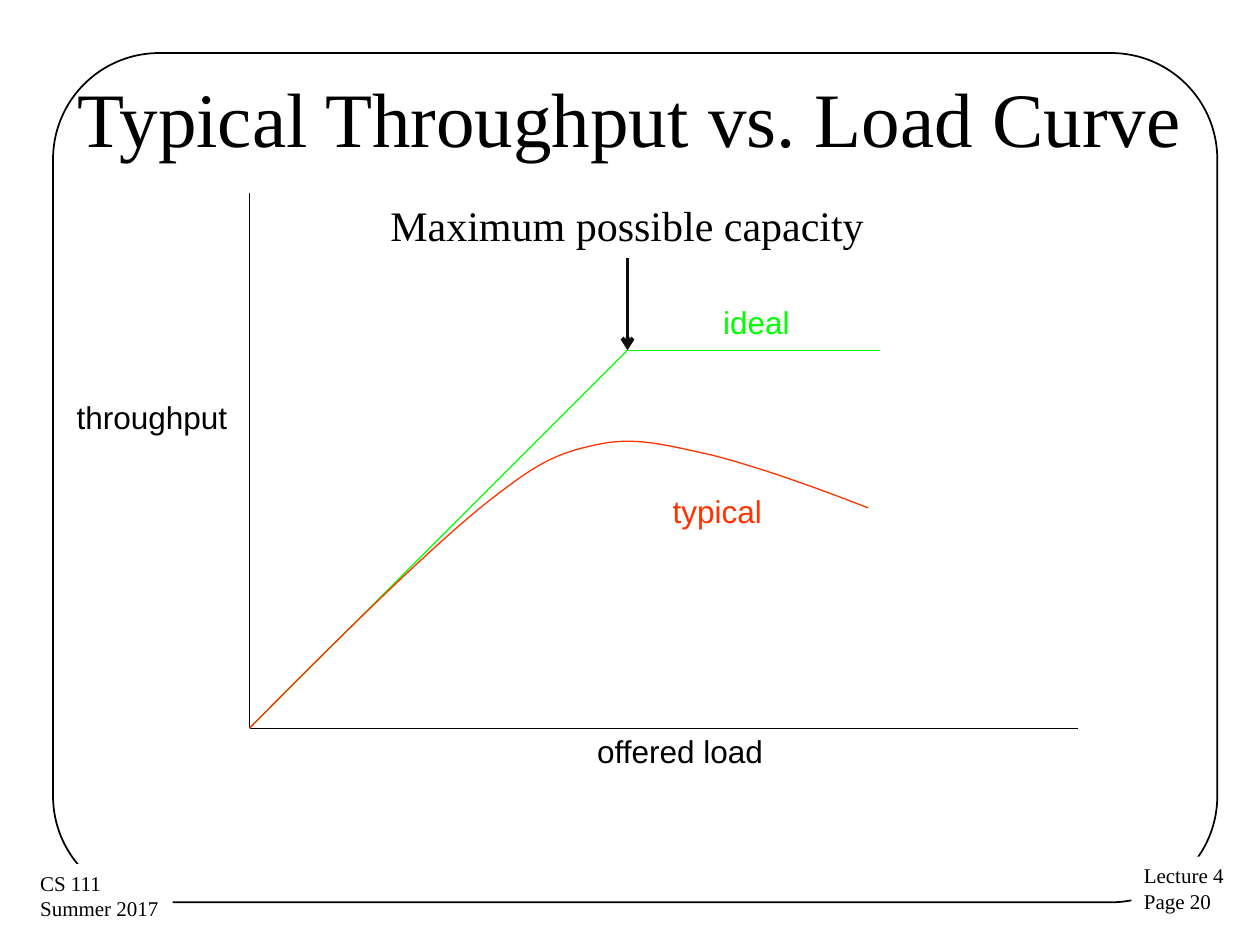
"""Build the slide on typical throughput against offered load."""
import dataclasses

import pptx
import pptx.dml.color
import pptx.enum.shapes
import pptx.enum.text
import pptx.oxml
import pptx.oxml.ns
import pptx.util

Cm = pptx.util.Cm
SHAPE = pptx.enum.shapes.MSO_SHAPE
ALIGN = pptx.enum.text.PP_ALIGN
ANCHOR = pptx.enum.text.MSO_ANCHOR


@dataclasses.dataclass(frozen=True)
class Theme:
    ink: str = "000000"
    paper: str = "FFFFFF"
    ideal: str = "00FF00"
    typical: str = "FF3300"
    arrow: str = "0D0D0D"
    serif: str = "Times New Roman"
    sans: str = "Arial"
    title: int = 44
    callout: int = 24
    label: int = 18
    footer: int = 12
    thin: float = 0.75
    frame: float = 1
    bold: float = 2.25


THEME = Theme()
ORIGIN = (5.03, 14.68)
KNEE = (12.65, 7.06)


def rgb(colour):
    return pptx.dml.color.RGBColor.from_string(colour)


def set_line(item, colour, weight):
    item.line.color.rgb = rgb(colour)
    item.line.width = pptx.util.Pt(weight)


def write(frame, text, size=THEME.label, font=THEME.sans, colour=THEME.ink,
          align=ALIGN.LEFT, anchor=ANCHOR.TOP, wrap=False):
    frame.text = text
    frame.word_wrap = wrap
    frame.vertical_anchor = anchor
    for paragraph in frame.paragraphs:
        paragraph.alignment = align
        for run in paragraph.runs:
            run.font.size = pptx.util.Pt(size)
            run.font.name = font
            run.font.color.rgb = rgb(colour)


def add_label(slide, text, left, top, width, height=1.09, **style):
    label = slide.shapes.add_textbox(Cm(left), Cm(top), Cm(width), Cm(height))
    write(label.text_frame, text, **style)


def add_frame(slide):
    frame = slide.shapes.add_shape(SHAPE.ROUNDED_RECTANGLE, Cm(1.07), Cm(1.07),
                                   Cm(23.47), Cm(17.12))
    frame.adjustments[0] = 0.125
    frame.shadow.inherit = False
    frame.fill.background()
    set_line(frame, THEME.ink, THEME.frame)


def add_footer(slide, text, left, top, width):
    footer = slide.shapes.add_shape(SHAPE.RECTANGLE, Cm(left), Cm(top), Cm(width), Cm(1.3))
    footer.shadow.inherit = False
    footer.fill.solid()
    footer.fill.fore_color.rgb = rgb(THEME.paper)
    footer.line.fill.background()
    write(footer.text_frame, text, size=THEME.footer, font=THEME.serif)


def add_title(slide, text):
    title = slide.shapes.title
    title.left, title.top, title.width, title.height = Cm(1.27), Cm(0.76), Cm(22.86), Cm(3.18)
    write(title.text_frame, text, size=THEME.title, font=THEME.serif,
          align=ALIGN.CENTER, anchor=ANCHOR.MIDDLE, wrap=True)


def add_line(slide, start, end, colour=THEME.ink, weight=THEME.thin, arrow=False):
    line = slide.shapes.add_connector(pptx.enum.shapes.MSO_CONNECTOR.STRAIGHT,
                                      *map(Cm, start + end))
    set_line(line, colour, weight)
    if arrow:
        head = pptx.oxml.parse_xml(
            f'<a:tailEnd {pptx.oxml.ns.nsdecls("a")} type="arrow"/>')
        line.line._get_or_add_ln().append(head)
    line._element.spPr.append(
        pptx.oxml.parse_xml(f'<a:effectLst {pptx.oxml.ns.nsdecls("a")}/>'))


def bezier_points(start, bends, steps=16):
    """Return points along a chain of cubic Bezier bends."""
    points = [start]
    for first, second, end in bends:
        for step in range(1, steps + 1):
            t = step / steps
            weights = ((1 - t) ** 3, 3 * t * (1 - t) ** 2, 3 * t ** 2 * (1 - t), t ** 3)
            corners = (start, first, second, end)
            points.append(tuple(sum(w * corner[axis] for w, corner in zip(weights, corners))
                                for axis in (0, 1)))
        start = end
    return points


def add_curve(slide, start, bends, colour):
    points = [(Cm(x), Cm(y)) for x, y in bezier_points(start, bends)]
    builder = slide.shapes.build_freeform(*points[0])
    builder.add_line_segments(points[1:], close=False)
    curve = builder.convert_to_shape()
    curve.shadow.inherit = False
    curve.fill.background()
    set_line(curve, colour, THEME.thin)


def main():
    deck = pptx.Presentation()
    deck.slide_width, deck.slide_height = Cm(25.4), Cm(19.05)
    slide = deck.slides.add_slide(deck.slide_layouts[5])

    add_frame(slide)
    add_footer(slide, "Lecture 4\nPage 20", 22.81, 17.27, 2.16)
    add_footer(slide, "CS 111\nSummer 2017", 0.56, 17.42, 2.92)
    add_title(slide, "Typical Throughput vs. Load Curve")

    add_line(slide, (ORIGIN[0], 3.89), ORIGIN)
    add_line(slide, ORIGIN, (21.74, ORIGIN[1]))
    add_label(slide, "throughput ", 1.12, 7.9, 4.06, align=ALIGN.CENTER)
    add_label(slide, "offered load", 11.79, 14.63, 4.24)

    add_line(slide, ORIGIN, KNEE, THEME.ideal)
    add_line(slide, KNEE, (17.73, KNEE[1]), THEME.ideal)
    add_label(slide, "ideal", 14.33, 5.99, 2.01, colour=THEME.ideal)

    add_curve(slide, ORIGIN, [
        ((6.76, 12.93), (8.51, 11.2), (9.68, 10.24)),
        ((10.85, 9.3), (11.23, 9.14), (12.01, 8.97)),
        ((12.78, 8.79), (13.41, 8.97), (14.33, 9.17)),
        ((15.24, 9.4), (16.38, 9.8), (17.5, 10.24)),
    ], THEME.typical)
    add_label(slide, "typical", 13.31, 9.8, 2.51, colour=THEME.typical)

    add_line(slide, (KNEE[0], 5.21), KNEE, THEME.arrow, THEME.bold, arrow=True)
    add_label(slide, "Maximum possible capacity", 7.62, 3.89, 10.16, 1.27,
              size=THEME.callout, font=THEME.serif)

    deck.save("out.pptx")


if __name__ == "__main__":
    main()
